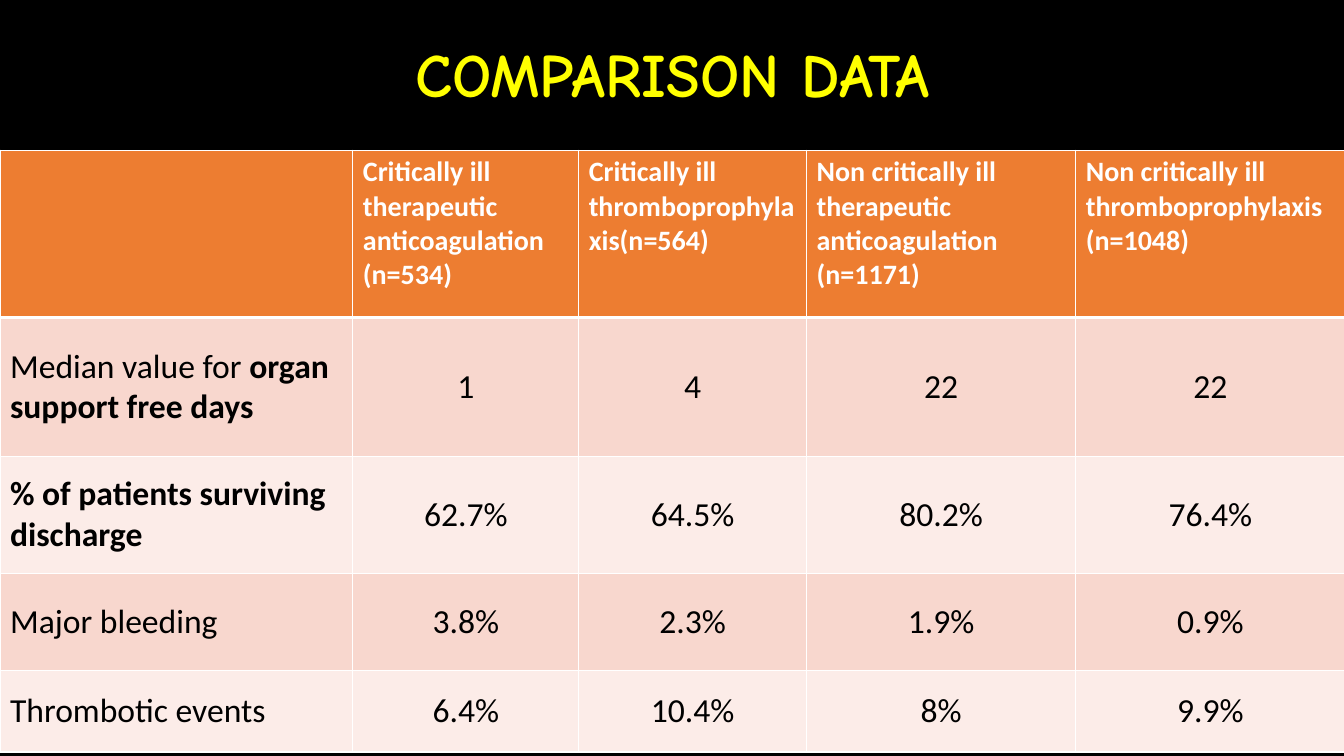
from lxml.etree import SubElement
from pptx import Presentation
from pptx.dml.color import RGBColor
from pptx.enum.text import MSO_ANCHOR, PP_ALIGN
from pptx.oxml import parse_xml
from pptx.oxml.ns import nsdecls
from pptx.util import Inches, Pt

COLORS = {
    "black": "000000", "white": "FFFFFF", "yellow": "FFFF00",
    "orange": "ED7D31", "peach": "F8D7CE", "blush": "FCECE8",
}
WIDTHS = [3.5, 2.24, 2.26, 2.67, 2.67]
HEIGHTS = [1.66, 1.38, 1.16, 0.96, 0.81]
ROWS = [
    ["", "Critically ill therapeutic anticoagulation (n=534)",
     "Critically ill thromboprophylaxis(n=564)",
     "Non critically ill therapeutic anticoagulation\n(n=1171)",
     "Non critically ill thromboprophylaxis (n=1048)"],
    ["Median value for *organ support free days*", "1", "4", "22", "22"],
    ["*% of patients surviving discharge*", "62.7%", "64.5%", "80.2%", "76.4%"],
    ["Major bleeding", "3.8%", "2.3%", "1.9%", "0.9%"],
    ["Thrombotic events", "6.4%", "10.4%", "8%", "9.9%"],
]


def color(name):
    return RGBColor.from_string(COLORS[name])


def write(frame, text, size=24, font="Calibri", ink="black", bold=False,
          align=PP_ALIGN.LEFT, spacing=None):
    for i, line in enumerate(text.split("\n")):
        para = frame.add_paragraph() if i else frame.paragraphs[0]
        para.alignment = align
        if spacing:
            para.line_spacing = spacing
        for j, part in enumerate(line.split("*")):
            if part:
                run = para.add_run()
                run.text = part
                run.font.size = Pt(size)
                run.font.name = font
                run.font.bold = bold or j % 2 == 1
                run.font.color.rgb = color(ink)


class Deck:
    def __init__(self):
        self.file = Presentation()
        self.file.slide_width = Inches(13.33)
        self.file.slide_height = Inches(7.5)
        self.slide = self.file.slides.add_slide(self.file.slide_layouts[6])
        fill = self.slide.background.fill
        fill.solid()
        fill.fore_color.rgb = color("black")

    def title(self, text, left, top, width, height):
        box = self.slide.shapes.add_textbox(
            Inches(left), Inches(top), Inches(width), Inches(height))
        frame = box.text_frame
        frame.word_wrap = True
        frame.vertical_anchor = MSO_ANCHOR.MIDDLE
        write(frame, text, size=44, font="Comic Neue", ink="yellow",
              bold=True, align=PP_ALIGN.CENTER, spacing=0.9)

    def border(self, cell, sides):
        props = cell._tc.get_or_add_tcPr()
        for i, (side, width) in enumerate(sides.items()):
            line = parse_xml(f'<a:ln{side} {nsdecls("a")} w="{Pt(width)}"/>')
            fill = SubElement(line, "{%s}solidFill" % line.nsmap["a"])
            SubElement(fill, "{%s}srgbClr" % line.nsmap["a"], val=COLORS["white"])
            props.insert(i, line)

    def cell(self, cell, text, row, col):
        head = row == 0
        cell.fill.solid()
        shade = "orange" if head else "peach" if row % 2 else "blush"
        cell.fill.fore_color.rgb = color(shade)
        self.border(cell, {"L": 1, "R": 1, "T": 3 if row == 1 else 1,
                           "B": 3 if head else 1})
        if head:
            write(cell.text_frame, text, size=20, ink="white", bold=True)
        else:
            cell.vertical_anchor = MSO_ANCHOR.MIDDLE
            write(cell.text_frame, text,
                  align=PP_ALIGN.CENTER if col else PP_ALIGN.LEFT)

    def table(self, rows, left, top, widths, heights):
        grid = self.slide.shapes.add_table(
            len(rows), len(widths), Inches(left), Inches(top),
            Inches(sum(widths)), Inches(sum(heights))).table
        for col, width in zip(grid.columns, widths):
            col.width = Inches(width)
        for r, (texts, height) in enumerate(zip(rows, heights)):
            grid.rows[r].height = Inches(height)
            for c, text in enumerate(texts):
                self.cell(grid.cell(r, c), text, r, c)


def main():
    deck = Deck()
    deck.title("COMPARISON DATA", 0.92, 0.04, 11.5, 1.45)
    deck.table(ROWS, 0, 1.49, WIDTHS, HEIGHTS)
    deck.file.save("out.pptx")


if __name__ == "__main__":
    main()
